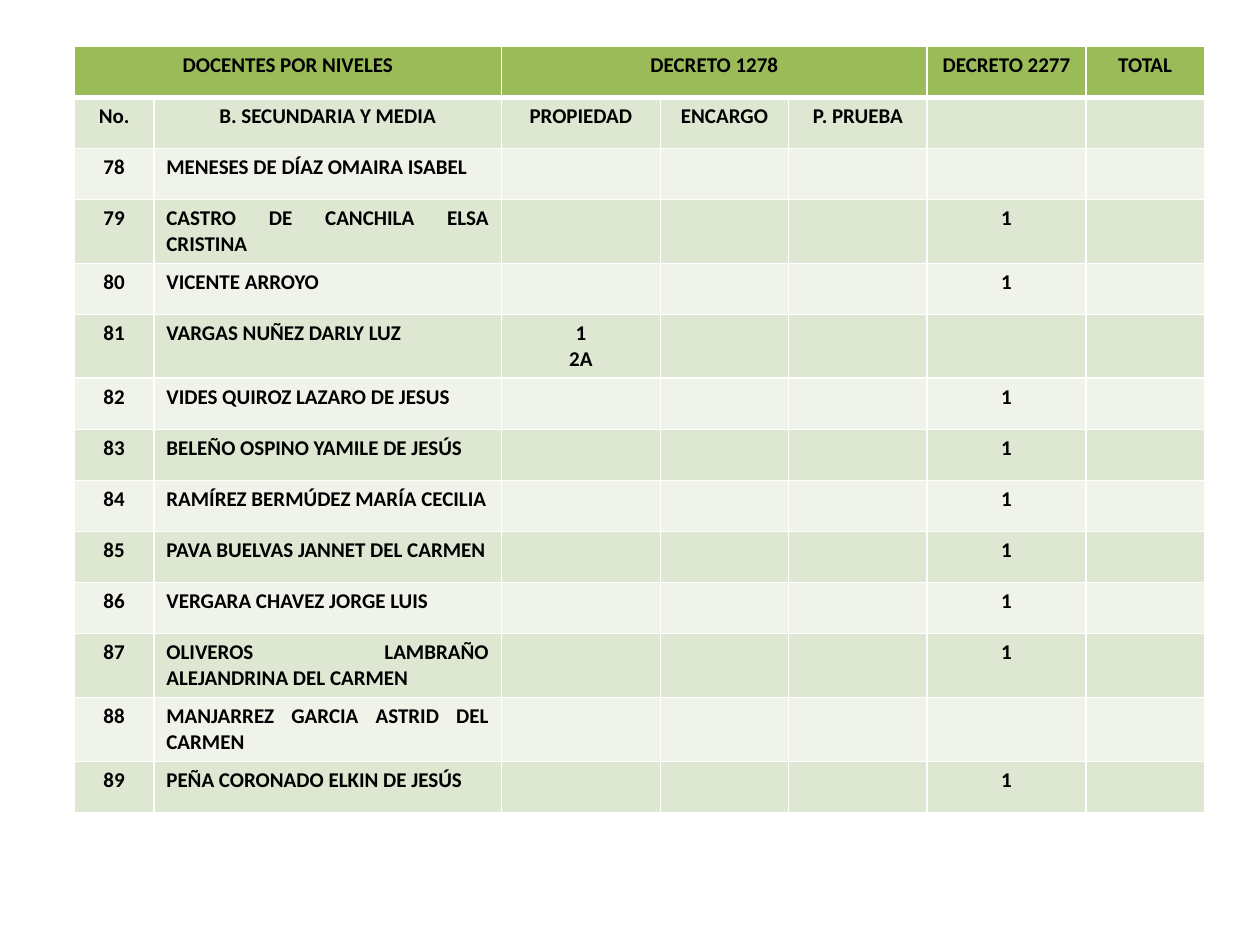
from dataclasses import dataclass

from lxml.etree import SubElement
from pptx import Presentation
from pptx.dml.color import RGBColor
from pptx.enum.text import PP_ALIGN as Align
from pptx.oxml.ns import qn
from pptx.util import Cm, Pt

COLOURS = {
    "header": "9BBB59",
    "dark_band": "DEE7D1",
    "light_band": "EFF3EA",
    "border": "FFFFFF",
    "text": "000000",
}
COLUMN_WIDTHS = [1.6, 7.01, 3.2, 2.59, 2.79, 3.2, 2.39]
ROW_HEIGHT = 1.03
FIRST_NUMBER = 78


@dataclass(frozen=True)
class Heading:
    text: str
    column: int
    span: int = 1


@dataclass(frozen=True)
class Teacher:
    name: str
    decree_2277: str = ""
    tenured: str = ""


HEADINGS = [
    Heading("DOCENTES POR NIVELES", 0, 2),
    Heading("DECRETO 1278", 2, 3),
    Heading("DECRETO 2277", 5),
    Heading("TOTAL", 6),
]
SUBHEADINGS = ["No.", "B. SECUNDARIA Y MEDIA", "PROPIEDAD", "ENCARGO", "P. PRUEBA", "", ""]
TEACHERS = [
    Teacher("MENESES DE DÍAZ OMAIRA ISABEL"),
    Teacher("CASTRO DE CANCHILA ELSA CRISTINA", "1"),
    Teacher("VICENTE ARROYO", "1"),
    Teacher("VARGAS NUÑEZ DARLY LUZ", tenured="1\n2A"),
    Teacher("VIDES QUIROZ LAZARO DE JESUS", "1"),
    Teacher("BELEÑO OSPINO YAMILE DE JESÚS", "1"),
    Teacher("RAMÍREZ BERMÚDEZ MARÍA CECILIA", "1"),
    Teacher("PAVA BUELVAS JANNET DEL CARMEN", "1"),
    Teacher("VERGARA CHAVEZ JORGE LUIS", "1"),
    Teacher("OLIVEROS LAMBRAÑO ALEJANDRINA DEL CARMEN", "1"),
    Teacher("MANJARREZ GARCIA ASTRID DEL CARMEN"),
    Teacher("PEÑA CORONADO ELKIN DE JESÚS", "1"),
]


def write_text(cell, text: str, *, align=Align.CENTER, size: float = 12,
               bold: bool = True, font: str = "Calibri", colour: str = "text") -> None:
    cell.text = text
    for para in cell.text_frame.paragraphs:
        para.alignment = align
        for span in para.runs:
            span.font.name = font
            span.font.size = Pt(size)
            span.font.bold = bold
            span.font.color.rgb = RGBColor.from_string(COLOURS[colour])


def paint_cell(cell, fill: str, bottom: float = 1) -> None:
    # Borders come before the fill in the cell properties
    properties = cell._tc.get_or_add_tcPr()
    for side, width in {"L": 1, "R": 1, "T": 1, "B": bottom}.items():
        line = SubElement(properties, qn(f"a:ln{side}"), w=str(Pt(width)))
        solid = SubElement(line, qn("a:solidFill"))
        SubElement(solid, qn("a:srgbClr"), val=COLOURS["border"])
    cell.fill.solid()
    cell.fill.fore_color.rgb = RGBColor.from_string(COLOURS[fill])


def fill_headings(table) -> None:
    for cell in table.rows[0].cells:
        paint_cell(cell, "header", bottom=3)
    for heading in HEADINGS:
        cell = table.cell(0, heading.column)
        if heading.span > 1:
            cell.merge(table.cell(0, heading.column + heading.span - 1))
        write_text(cell, heading.text)


def fill_row(table, row: int, texts: list[str], name_align=Align.JUSTIFY) -> None:
    band = "dark_band" if row % 2 else "light_band"
    for column, text in enumerate(texts):
        cell = table.cell(row, column)
        paint_cell(cell, band)
        if text:
            write_text(cell, text, align=name_align if column == 1 else Align.CENTER)


def main() -> None:
    deck = Presentation()
    deck.slide_width, deck.slide_height = Cm(25.4), Cm(19.05)
    page = deck.slides.add_slide(deck.slide_layouts[6])

    # Table grid
    row_count = len(TEACHERS) + 2
    table = page.shapes.add_table(
        row_count, len(COLUMN_WIDTHS), Cm(1.5), Cm(0.93),
        Cm(sum(COLUMN_WIDTHS)), Cm(ROW_HEIGHT * row_count)).table
    for column, width in zip(table.columns, COLUMN_WIDTHS):
        column.width = Cm(width)
    for row in table.rows:
        row.height = Cm(ROW_HEIGHT)

    # Headings, then one row per teacher
    fill_headings(table)
    fill_row(table, 1, SUBHEADINGS, name_align=Align.CENTER)
    for index, teacher in enumerate(TEACHERS):
        number = str(FIRST_NUMBER + index)
        fill_row(table, index + 2, [number, teacher.name, teacher.tenured, "", "",
                                    teacher.decree_2277, ""])

    deck.save("out.pptx")


if __name__ == "__main__":
    main()
